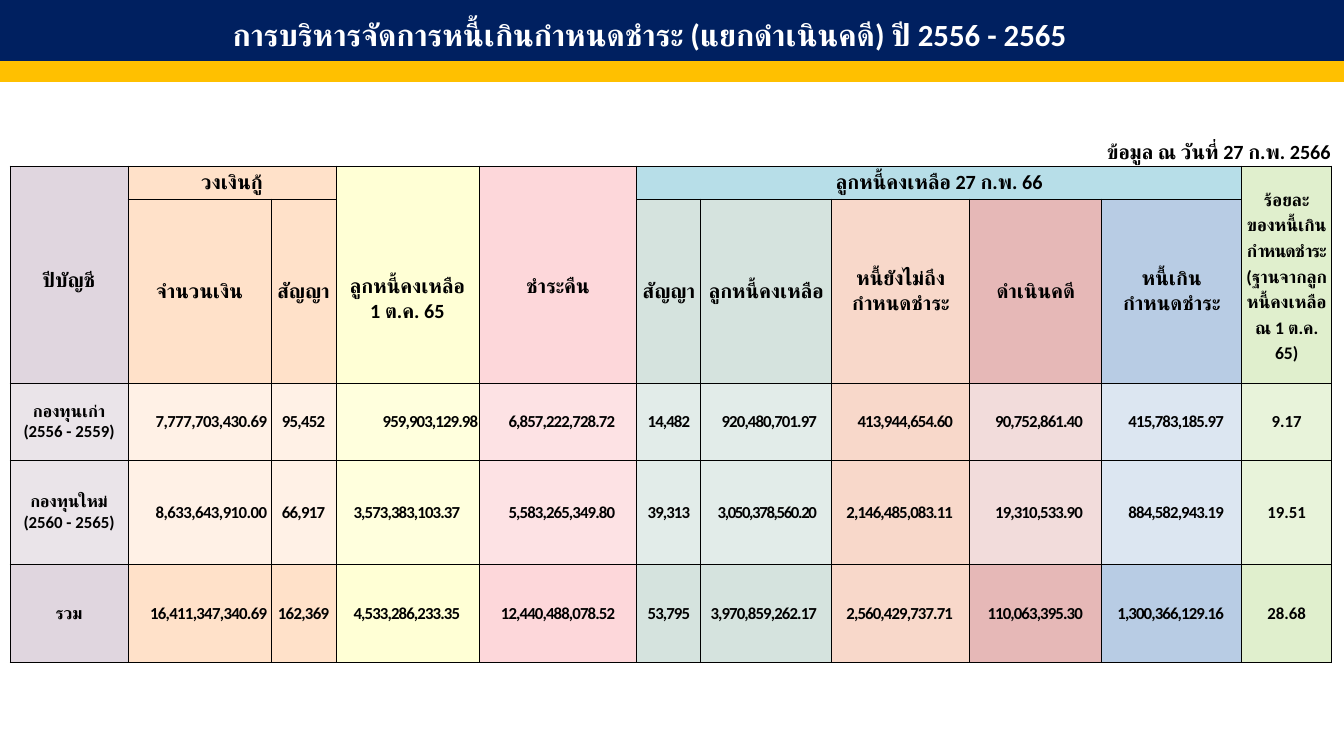
import copy
from typing import NamedTuple

import pptx
import pptx.dml.color
import pptx.enum.shapes
import pptx.enum.text
import pptx.oxml
import pptx.oxml.ns
import pptx.util
from lxml import etree

RGB = pptx.dml.color.RGBColor
ALIGN = pptx.enum.text.PP_ALIGN
ANCHOR = pptx.enum.text.MSO_ANCHOR
qn = pptx.oxml.ns.qn

BLACK, WHITE = RGB(0x00, 0x00, 0x00), RGB(0xFF, 0xFF, 0xFF)
NAVY, GOLD = RGB(0x00, 0x20, 0x60), RGB(0xFF, 0xC0, 0x00)
MAUVE, PALE_MAUVE = RGB(0xE0, 0xD6, 0xDF), RGB(0xEA, 0xE4, 0xE9)
PEACH, PALE_PEACH = RGB(0xFF, 0xE1, 0xC9), RGB(0xFF, 0xF1, 0xE6)
YELLOW, PALE_YELLOW = RGB(0xFF, 0xFF, 0xD5), RGB(0xFF, 0xFF, 0xDD)
PINK, PALE_PINK = RGB(0xFD, 0xD7, 0xDA), RGB(0xFD, 0xE2, 0xE4)
SAGE, PALE_SAGE = RGB(0xD5, 0xE3, 0xDE), RGB(0xE2, 0xEC, 0xE9)
ROSE, PALE_ROSE = RGB(0xE6, 0xB8, 0xB7), RGB(0xF2, 0xDC, 0xDB)
BLUE, PALE_BLUE = RGB(0xB8, 0xCC, 0xE4), RGB(0xDC, 0xE6, 0xF1)
GREEN, PALE_GREEN = RGB(0xE0, 0xEF, 0xCD), RGB(0xE8, 0xF3, 0xDA)
SALMON, AQUA = RGB(0xF8, 0xD8, 0xCA), RGB(0xB7, 0xDE, 0xE8)


class Column(NamedTuple):
    width: int
    strong: RGB
    pale: RGB
    right_gap: int = 0
    spacing: int = 0


COLUMNS = [
    Column(118, MAUVE, PALE_MAUVE),
    Column(143, PEACH, PALE_PEACH, 4, -30),
    Column(65, PEACH, PALE_PEACH, 0, -40),
    Column(143, YELLOW, PALE_YELLOW, 19, -50),
    Column(158, PINK, PALE_PINK, 22, -50),
    Column(64, SAGE, PALE_SAGE, 0, -50),
    Column(131, SAGE, PALE_SAGE, 15, -50),
    Column(138, SALMON, SALMON, 17, -50),
    Column(132, ROSE, PALE_ROSE, 19, -50),
    Column(140, BLUE, PALE_BLUE, 18, -50),
    Column(90, GREEN, PALE_GREEN),
]
ROW_HEIGHTS = [28, 33, 184, 77, 104, 99]
FIRST_DATA_ROW = 3
TOTAL_ROW = 5

DATA = [
    ["กองทุนเก่า\v(2556 - 2559)", "7,777,703,430.69", "95,452", "959,903,129.98",
     "6,857,222,728.72", "14,482", "920,480,701.97", "413,944,654.60",
     "90,752,861.40", "415,783,185.97", "9.17"],
    ["กองทุนใหม่\v(2560 - 2565)", "8,633,643,910.00", "66,917", "3,573,383,103.37",
     "5,583,265,349.80", "39,313", "3,050,378,560.20", "2,146,485,083.11",
     "19,310,533.90", "884,582,943.19", "19.51"],
    ["รวม", "16,411,347,340.69", "162,369", "4,533,286,233.35",
     "12,440,488,078.52", "53,795", "3,970,859,262.17", "2,560,429,737.71",
     "110,063,395.30", "1,300,366,129.16", "28.68"],
]
SUBHEADERS = {
    1: "จำนวนเงิน", 2: "สัญญา", 5: "สัญญา", 6: "ลูกหนี้คงเหลือ",
    7: "หนี้ยังไม่ถึง\vกำหนดชำระ", 8: "ดำเนินคดี", 9: "หนี้เกิน\vกำหนดชำระ",
}
GROUPS = [(1, 2, "วงเงินกู้", PEACH), (5, 9, "ลูกหนี้คงเหลือ 27 ก.พ. 66", AQUA)]
TALL_HEADERS = [
    (0, "ปีบัญชี", 12, 1, 1.5),
    (3, "ลูกหนี้คงเหลือ\n1 ต.ค. 65", 12, 49, 1.0),
    (4, "ชำระคืน", 12, 25, 1.0),
    (10, "ร้อยละ\vของหนี้เกิน\vกำหนดชำระ\v(ฐานจากลูกหนี้คงเหลือ ณ 1 ต.ค. 65)",
     10.5, 1, 1.2),
]


def px(length):
    return round(length * 914400 / 121)


def apply_format(target, values):
    for name, value in values.items():
        setattr(target, name, value)


def set_spacing(span, spacing):
    span.font._element.set("spc", str(spacing))


def write_text(frame, text, size, color, align=ALIGN.CENTER, line_spacing=1.0, spacing=0):
    frame.text = text
    for para in frame.paragraphs:
        apply_format(para, {"alignment": align, "line_spacing": line_spacing})
        for span in para.runs:
            apply_format(span.font, {"name": "Calibri", "size": pptx.util.Pt(size), "bold": True})
            span.font.color.rgb = color
            etree.SubElement(span.font._element, qn("a:cs")).set("typeface", "Calibri")
            set_spacing(span, spacing)
        for line_break in para._p.findall(qn("a:br")):
            line_break.insert(0, copy.deepcopy(para.runs[0].font._element))


def add_bar(page, top, height, color):
    bar = page.shapes.add_shape(
        pptx.enum.shapes.MSO_SHAPE.RECTANGLE, 0, px(top), px(1344), px(height))
    bar.shadow.inherit = False
    bar.fill.solid()
    bar.fill.fore_color.rgb = color
    bar.line.color.rgb = color
    bar.line.width = pptx.util.Pt(1)


def place_title(page, text):
    title = page.shapes.title
    apply_format(title, {"left": px(59), "top": px(10), "width": px(1181), "height": px(62)})
    apply_format(title.text_frame, {
        "word_wrap": True, "vertical_anchor": ANCHOR.TOP,
        "auto_size": pptx.enum.text.MSO_AUTO_SIZE.NONE})
    write_text(title.text_frame, text, 18.3, WHITE)
    page.shapes._spTree.append(title._element)


def add_borders(cell, sides):
    properties = cell._tc.get_or_add_tcPr()
    for side in sides:
        line = etree.SubElement(properties, qn("a:ln" + side), w="6350")
        fill = etree.SubElement(line, qn("a:solidFill"))
        etree.SubElement(fill, qn("a:srgbClr"), val=str(BLACK))


def add_grid(page):
    frame = page.shapes.add_table(
        len(ROW_HEIGHTS), len(COLUMNS), px(10), px(138),
        px(sum(column.width for column in COLUMNS)), px(sum(ROW_HEIGHTS)))
    table = frame.table
    apply_format(table, {"first_row": False, "horz_banding": False})
    for table_column, column in zip(table.columns, COLUMNS):
        table_column.width = px(column.width)
    for index, height in enumerate(ROW_HEIGHTS):
        table.rows[index].height = px(height)
        for cell in table.rows[index].cells:
            add_borders(cell, "LRTB" if index else "B")
            cell.fill.background()
            apply_format(cell, {
                "margin_left": px(1), "margin_right": px(1), "margin_top": px(1),
                "margin_bottom": 0, "vertical_anchor": ANCHOR.MIDDLE})
    return table


def fill_cell(cell, text, color, size=12, **text_format):
    cell.fill.solid()
    cell.fill.fore_color.rgb = color
    write_text(cell.text_frame, text, size, BLACK, **text_format)


def fill_headers(table):
    table.cell(0, 0).merge(table.cell(0, len(COLUMNS) - 1))
    write_text(table.cell(0, 0).text_frame, "ข้อมูล ณ วันที่ 27 ก.พ. 2566", 12, BLACK, ALIGN.RIGHT)
    for first, last, text, color in GROUPS:
        table.cell(1, first).merge(table.cell(1, last))
        fill_cell(table.cell(1, first), text, color)
    for index, text in SUBHEADERS.items():
        fill_cell(table.cell(2, index), text, COLUMNS[index].strong)
    for index, text, size, top_gap, line_spacing in TALL_HEADERS:
        cell = table.cell(1, index)
        cell.merge(table.cell(2, index))
        cell.margin_top = px(top_gap)
        fill_cell(cell, text, COLUMNS[index].strong, size, line_spacing=line_spacing)
    set_spacing(table.cell(1, 10).text_frame.paragraphs[0].runs[2], -50)


def fill_data(table):
    special_spacing = {(4, 6): -80, (5, 1): -40}
    for row, values in enumerate(DATA, FIRST_DATA_ROW):
        for index, (column, text) in enumerate(zip(COLUMNS, values)):
            cell = table.cell(row, index)
            color = column.strong if row == TOTAL_ROW else column.pale
            align = ALIGN.RIGHT if column.right_gap else ALIGN.CENTER
            cell.margin_right = px(max(column.right_gap, 1))
            fill_cell(cell, text, color, 10, align=align,
                      spacing=special_spacing.get((row, index), column.spacing))
    table.cell(FIRST_DATA_ROW, 3).margin_right = px(1)


def main():
    deck = pptx.Presentation()
    apply_format(deck, {"slide_width": px(1344), "slide_height": px(756)})
    page = deck.slides.add_slide(deck.slide_layouts[5])
    table = add_grid(page)
    fill_headers(table)
    fill_data(table)
    add_bar(page, 0, 62, NAVY)
    add_bar(page, 62, 19, GOLD)
    place_title(page, "การบริหารจัดการหนี้เกินกำหนดชำระ (แยกดำเนินคดี) ปี 2556 - 2565")
    deck.save("out.pptx")


if __name__ == "__main__":
    main()
